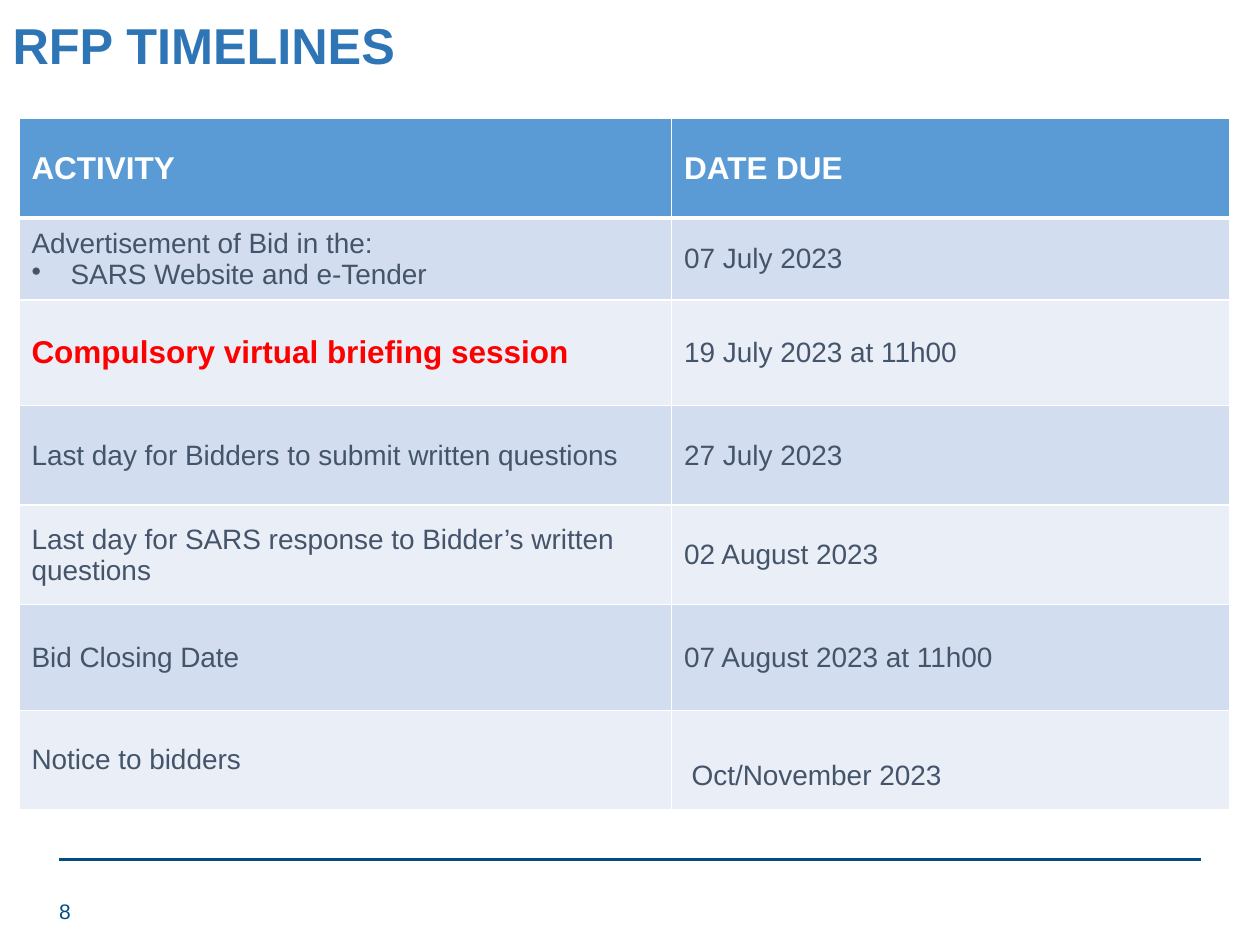
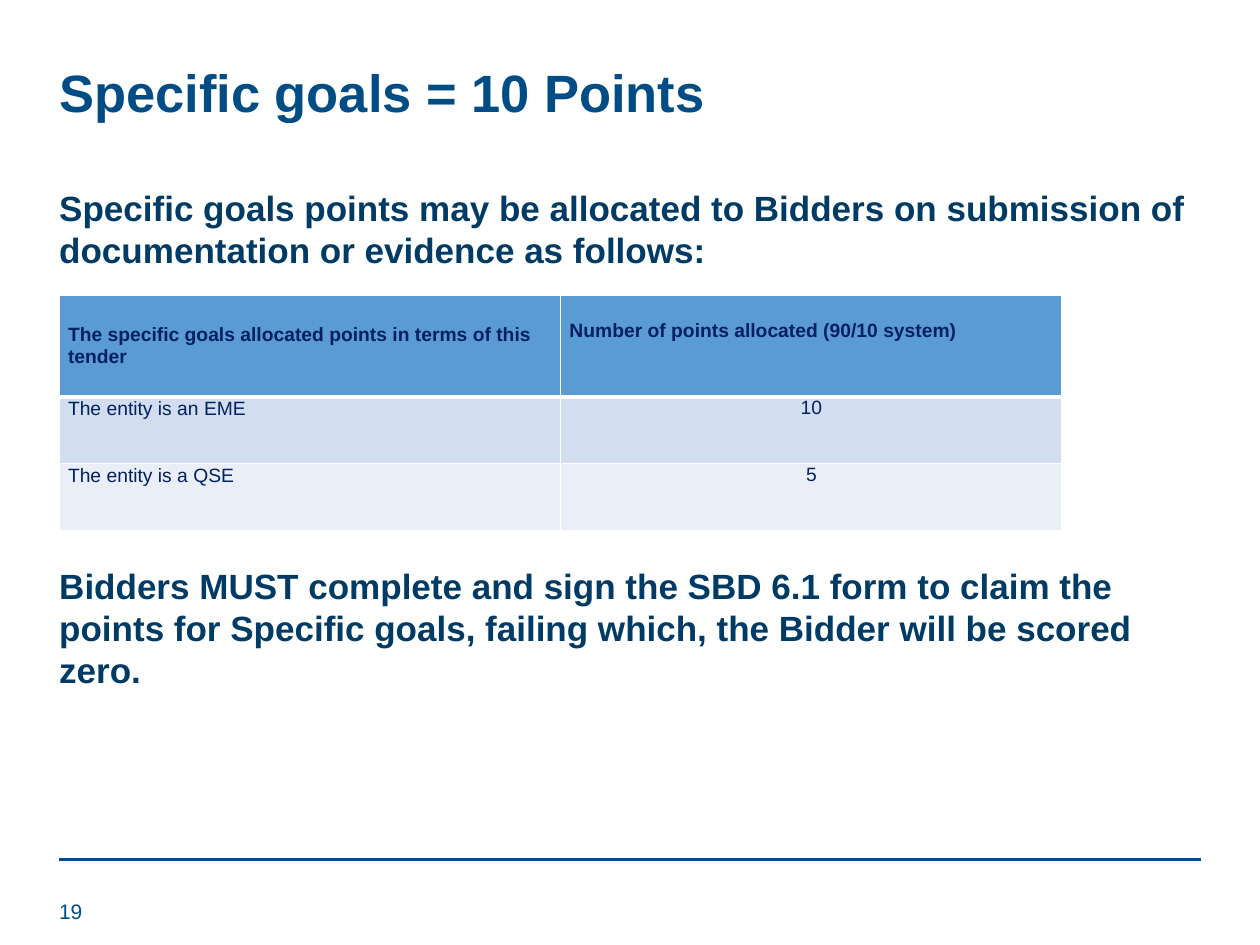
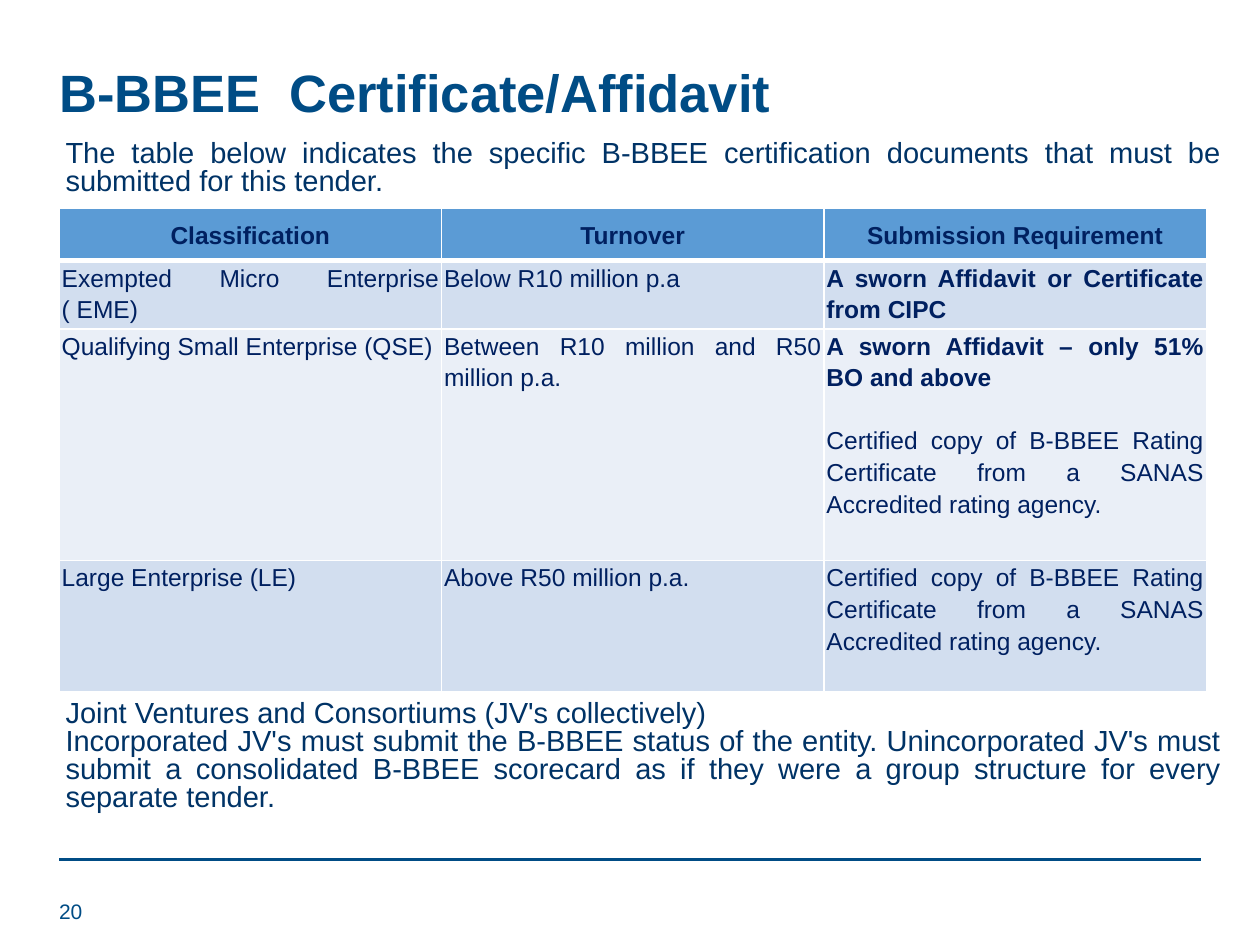
from lxml.etree import SubElement
from pptx import Presentation
from pptx.dml.color import RGBColor
from pptx.enum.shapes import MSO_CONNECTOR
from pptx.enum.text import MSO_ANCHOR, MSO_AUTO_SIZE, PP_ALIGN
from pptx.oxml import parse_xml
from pptx.oxml.ns import nsdecls, qn
from pptx.util import Inches, Pt

FONT = "Arial"
NAVY, BRIGHT, DEEP, SLATE = "004C85", "2E75B6", "003B65", "003366"
INK, GREY, RED, WHITE = "002060", "44546A", "FF0000", "FFFFFF"
HEADER, BANDS = "5B9BD5", ("D2DEEF", "EAEFF7")

# The slide is a grid of 20 columns and 15 rows
COLUMNS, ROWS = 20, 15
UNIT = Inches(0.5)
TITLE_BOX = (0.74, 0.96, 17.24, 1.16)


def grid(*lengths):
    return [round(length * UNIT) for length in lengths]


def color(hex_value):
    return RGBColor.from_string(hex_value)


def style(paragraph, size, ink, bold=False, align=PP_ALIGN.LEFT, line=None):
    paragraph.alignment = align
    paragraph.space_before = paragraph.space_after = Pt(0)
    if line:
        paragraph.line_spacing = line
    for run in paragraph.runs:
        run.font.name, run.font.size, run.font.bold = FONT, Pt(size), bold
        run.font.color.rgb = color(ink)


def set_bullet(paragraph, left=0.0, char=None):
    """Give the paragraph a hanging bullet, or none."""
    properties = paragraph._p.get_or_add_pPr()
    properties.set("marL", str(Inches(left)))
    properties.set("indent", str(-Inches(left)))
    if char:
        SubElement(properties, qn("a:buChar")).set("char", char)
    else:
        SubElement(properties, qn("a:buNone"))


def fill_placeholder(holder, box, text):
    holder.left, holder.top, holder.width, holder.height = grid(*box)
    frame = holder.text_frame
    frame.text = text
    frame.word_wrap = True
    frame.auto_size = MSO_AUTO_SIZE.NONE
    frame.vertical_anchor = MSO_ANCHOR.TOP
    return frame.paragraphs


def add_footer(slide, number):
    # Rule
    rule = slide.shapes.add_connector(
        MSO_CONNECTOR.STRAIGHT, *grid(0.94, 13.64, COLUMNS - 0.94, 13.64))
    rule.line.color.rgb = color(NAVY)
    rule.line.width = Pt(2)
    SubElement(rule._element.spPr, qn("a:effectLst"))
    # Page number
    page = slide.shapes.add_textbox(*grid(0.74, ROWS - 0.94, 4.5, 0.8)).text_frame
    page.text = str(number)
    page.word_wrap = True
    page.vertical_anchor = MSO_ANCHOR.MIDDLE
    style(page.paragraphs[0], 12, NAVY)


def start_slide(deck, layout, title, number, box=TITLE_BOX, size=30, ink=NAVY):
    slide = deck.slides.add_slide(deck.slide_layouts.get_by_name(layout))
    heading, = fill_placeholder(slide.shapes.title, box, title)
    style(heading, size, ink, bold=True, line=0.9)
    add_footer(slide, number)
    return slide


def add_body(slide, box, texts, size, ink, bold, align, pitch, skipped_lines):
    """Place an opening paragraph and, below the table, the closing ones."""
    paragraphs = fill_placeholder(slide.placeholders[1], box, "\n".join(texts))
    for paragraph in paragraphs:
        set_bullet(paragraph)
        style(paragraph, size, ink, bold, align, Pt(pitch))
    paragraphs[1].space_before = Pt(pitch * skipped_lines)


def draw_borders(cell, bottom):
    properties = cell._tc.get_or_add_tcPr()
    for index, (side, width) in enumerate(
            [("lnL", 1), ("lnR", 1), ("lnT", 1), ("lnB", bottom)]):
        properties.insert(index, parse_xml(
            f'<a:{side} {nsdecls("a")} w="{Pt(width)}"><a:solidFill>'
            f'<a:srgbClr val="{WHITE}"/></a:solidFill></a:{side}>'))


def add_banded_table(slide, left, top, widths, heights, content, size,
                     head_ink, ink, inset=None, anchor=MSO_ANCHOR.TOP,
                     head_align=PP_ALIGN.LEFT, align=PP_ALIGN.LEFT, line=None):
    table = slide.shapes.add_table(
        len(heights), len(widths),
        *grid(left, top, sum(widths), sum(heights))).table
    for column, width in zip(table.columns, grid(*widths)):
        column.width = width
    for r, (row, height, texts) in enumerate(
            zip(table.rows, grid(*heights), content)):
        row.height = height
        is_head = r == 0
        for cell, text in zip(row.cells, texts):
            cell.text = text
            cell.vertical_anchor = MSO_ANCHOR.MIDDLE if is_head else anchor
            if inset is not None:
                cell.margin_left = cell.margin_right = Inches(inset)
                cell.margin_top = cell.margin_bottom = 0
            cell.fill.solid()
            cell.fill.fore_color.rgb = color(HEADER if is_head else BANDS[(r - 1) % 2])
            draw_borders(cell, 3 if is_head else 1)
            for paragraph in cell.text_frame.paragraphs:
                style(paragraph, size, head_ink if is_head else ink, is_head,
                      head_align if is_head else align, line)
    return table


def build_timelines(deck):
    slide = start_slide(deck, "Title Only", "RFP TIMELINES", 8,
                        (0, 0.24, 17.24, 1.16), 28.8, BRIGHT)
    timeline = add_banded_table(
        slide, 0.3, 1.88, (10.36, 8.86),
        (1.58, 1.3, 1.68, 1.58, 1.58, 1.68, 1.58),
        [("ACTIVITY", "DATE DUE"),
         ("Advertisement of Bid in the:\nSARS Website and e-Tender", "07 July 2023"),
         ("Compulsory virtual briefing session", "19 July 2023 at 11h00"),
         ("Last day for Bidders to submit written questions", "27 July 2023"),
         ("Last day for SARS response to Bidder’s written questions", "02 August 2023"),
         ("Bid Closing Date", "07 August 2023 at 11h00"),
         ("Notice to bidders", "Oct/November 2023")],
        16, WHITE, GREY, anchor=MSO_ANCHOR.MIDDLE)
    # Larger headings, bulleted channel and highlighted briefing
    for heading in timeline.rows[0].cells:
        style(heading.text_frame.paragraphs[0], 18, WHITE, bold=True)
    set_bullet(timeline.cell(1, 0).text_frame.paragraphs[1], 0.31, "•")
    style(timeline.cell(2, 0).text_frame.paragraphs[0], 18, RED, bold=True)
    # The notice date sits lower and further in
    notice_date = timeline.cell(6, 1)
    notice_date.margin_left, notice_date.margin_top = Inches(0.16), Inches(0.3)


def build_specific_goals(deck):
    slide = start_slide(deck, "Title and Content", "Specific goals = 10 Points", 19)
    add_body(slide, (0.74, 2.86, 18.3, 9.3),
             ["Specific goals points may be allocated to Bidders on submission of "
              "documentation or evidence as follows:",
              "Bidders MUST complete and sign the SBD 6.1 form to claim the points "
              "for Specific goals, failing which, the Bidder will be scored zero."],
             20, DEEP, True, PP_ALIGN.LEFT, 24, 7)
    points = add_banded_table(
        slide, 0.94, 4.68, (7.96, 7.96), (1.62, 1.06, 1.06),
        [("The specific goals allocated points in terms of this tender",
          "Number of points allocated (90/10 system)"),
         ("The entity is an EME", "10"),
         ("The entity is a QSE", "5")],
        11, INK, INK, inset=0.07)
    points.cell(0, 1).margin_bottom = Inches(0.24)
    for r in (1, 2):
        points.cell(r, 0).text_frame.paragraphs[0].line_spacing = 1.07
        points.cell(r, 1).text_frame.paragraphs[0].alignment = PP_ALIGN.CENTER


def build_certificates(deck):
    slide = start_slide(deck, "Title and Content", "B-BBEE  Certificate/Affidavit", 20)
    add_body(slide, (0.84, 2.14, 18.72, 11.4),
             ["The table below indicates the specific B-BBEE certification documents "
              "that must be submitted for this tender.",
              "Joint Ventures and Consortiums (JV's collectively)",
              "Incorporated JV's must submit the B-BBEE status of the entity. "
              "Unincorporated JV's must submit a consolidated B-BBEE scorecard as if "
              "they were a group structure for every separate tender."],
             16.6, SLATE, False, PP_ALIGN.JUSTIFY, 16, 18)
    rating = ("Certified copy of B-BBEE Rating Certificate from a SANAS "
              "Accredited rating agency.")
    requirements = add_banded_table(
        slide, 0.94, 3.3, (6.07,) * 3, (0.84, 1.08, 3.68, 2.08),
        [("Classification", "Turnover", "Submission Requirement"),
         ("Exempted Micro Enterprise ( EME)", "Below R10 million p.a",
          "A sworn Affidavit or Certificate from CIPC"),
         ("Qualifying Small Enterprise (QSE)",
          "Between R10 million and R50 million p.a.",
          "A sworn Affidavit – only 51% BO and above\n" + rating),
         ("Large Enterprise (LE)", "Above R50 million p.a.", rating)],
        14, INK, INK, inset=0.02, head_align=PP_ALIGN.CENTER,
        align=PP_ALIGN.JUSTIFY, line=1.15)
    # Affidavits stand out in bold
    for r in (1, 2):
        affidavit = requirements.cell(r, 2).text_frame.paragraphs[0]
        affidavit.runs[0].font.bold = True
    requirements.cell(2, 2).text_frame.paragraphs[1].space_before = Pt(18)


def main():
    deck = Presentation()
    deck.slide_width, deck.slide_height = grid(COLUMNS, ROWS)
    build_timelines(deck)
    build_specific_goals(deck)
    build_certificates(deck)
    deck.save("out.pptx")


if __name__ == "__main__":
    main()
